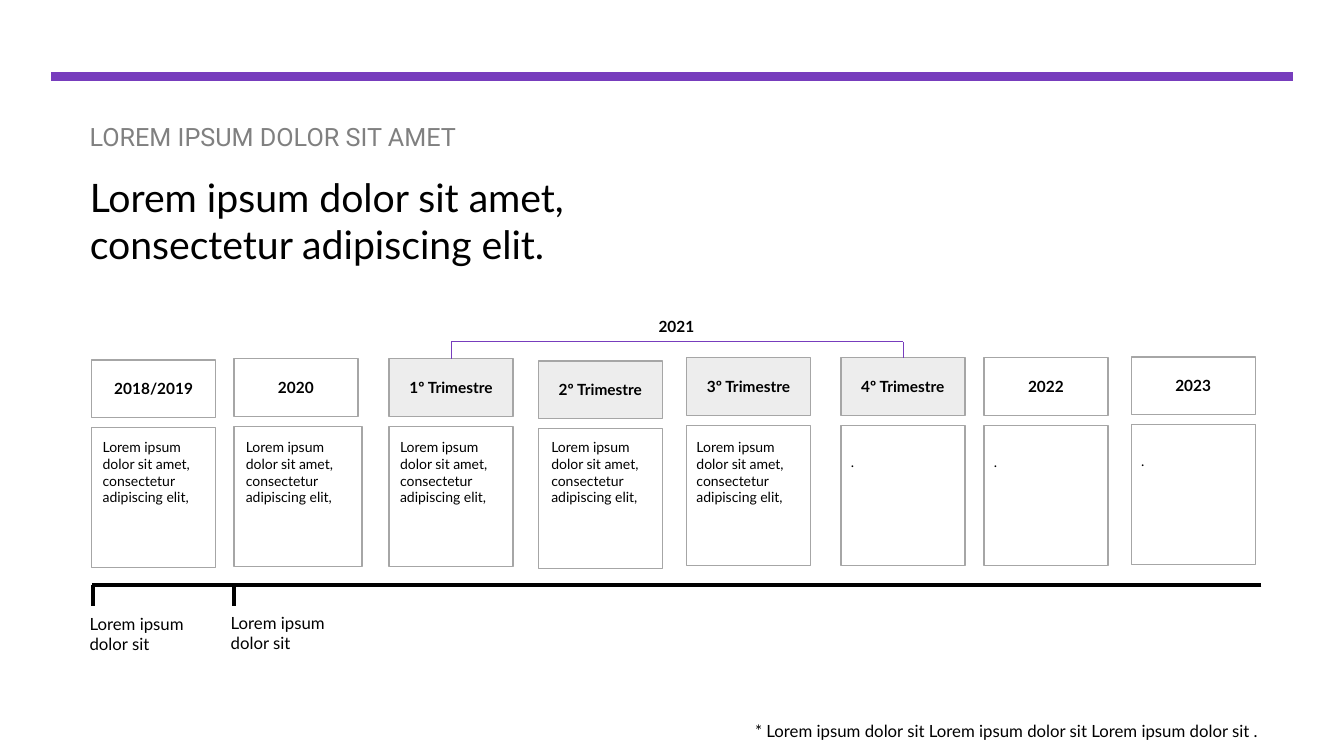
from pptx import Presentation
from pptx.dml.color import RGBColor
from pptx.enum.shapes import MSO_CONNECTOR, MSO_SHAPE
from pptx.enum.text import MSO_ANCHOR, MSO_AUTO_SIZE, PP_ALIGN
from pptx.oxml.ns import qn
from pptx.util import Inches, Pt

RECTANGLE = MSO_SHAPE.RECTANGLE
ROUNDED = MSO_SHAPE.ROUNDED_RECTANGLE
STRAIGHT = MSO_CONNECTOR.STRAIGHT
TOP, MIDDLE = MSO_ANCHOR.TOP, MSO_ANCHOR.MIDDLE
LEFT, CENTER, RIGHT = PP_ALIGN.LEFT, PP_ALIGN.CENTER, PP_ALIGN.RIGHT
NO_FIT = MSO_AUTO_SIZE.NONE

BLACK = RGBColor(0x00, 0x00, 0x00)
GREY = RGBColor(0x80, 0x80, 0x80)
BORDER = RGBColor(0xA6, 0xA6, 0xA6)
PALE = RGBColor(0xED, 0xED, 0xED)
PURPLE = RGBColor(0x77, 0x3D, 0xBD)

FILLER = "Lorem ipsum dolor sit amet, consectetur adipiscing elit,"
CARD_WIDTH, CARD_HEIGHT, HEADER_HEIGHT = 1.23, 1.39, 0.57
HEADER_RISE = 0.67
AXIS_Y, BRACKET_Y = 5.8, 3.39

# label, left, card top, card width, header fill, note, note left, note top
PERIODS = [
    ("2018/2019", 0.91, 4.24, CARD_WIDTH, None, FILLER, 0.92, 4.3),
    ("2020", 2.32, 4.23, 1.27, None, FILLER, 2.34, 4.3),
    ("1º Trimestre", 3.86, 4.23, CARD_WIDTH, PALE, FILLER, 3.87, 4.3),
    ("2º Trimestre", 5.34, 4.25, CARD_WIDTH, PALE, FILLER, 5.37, 4.3),
    ("3º Trimestre", 6.81, 4.22, CARD_WIDTH, PALE, FILLER, 6.81, 4.3),
    ("4º Trimestre", 8.34, 4.22, CARD_WIDTH, PALE, ".", 8.34, 4.45),
    ("2022", 9.76, 4.22, CARD_WIDTH, None, ".", 9.76, 4.45),
    ("2023", 11.22, 4.21, CARD_WIDTH, None, ".", 11.22, 4.44),
]
MILESTONES = [(0.92, 0.79, 6.04), (2.32, 2.19, 6.03)]


class TimelinePage:
    """Draws styled timeline elements on one page."""

    def __init__(self, page, font="Lato"):
        self.page = page
        self.font = font

    def set_text(self, shape, text, size, color=BLACK, bold=False, align=LEFT,
                 anchor=TOP, font=None):
        frame = shape.text_frame
        frame.word_wrap = True
        frame.auto_size = NO_FIT
        frame.vertical_anchor = anchor
        frame.text = text
        para = frame.paragraphs[0]
        para.alignment = align
        for span in para.runs:
            span.font.name = font or self.font
            span.font.size = Pt(size)
            span.font.bold = bold
            span.font.color.rgb = color

    def title(self, text, left, top, width, height, size):
        title = self.page.shapes.title
        title.left, title.top = Inches(left), Inches(top)
        title.width, title.height = Inches(width), Inches(height)
        self.set_text(title, text, size)

    def text(self, text, left, top, width, height, size, **style):
        box = self.page.shapes.add_textbox(
            Inches(left), Inches(top), Inches(width), Inches(height))
        self.set_text(box, text, size, **style)

    def box(self, kind, left, top, width, height, fill=None):
        shape = self.page.shapes.add_shape(
            kind, Inches(left), Inches(top), Inches(width), Inches(height))
        shape.shadow.inherit = False
        if fill is None:
            shape.fill.background()
        else:
            shape.fill.solid()
            shape.fill.fore_color.rgb = fill
        shape.line.color.rgb = BORDER
        shape.line.width = Pt(1)
        return shape

    def header(self, label, left, top, fill):
        shape = self.box(ROUNDED, left, top, CARD_WIDTH, HEADER_HEIGHT, fill)
        shape.adjustments[0] = 0
        self.set_text(shape, label, 11, bold=True, align=CENTER, anchor=MIDDLE)
        return shape

    def line(self, x1, y1, x2, y2, color, width):
        line = self.page.shapes.add_connector(
            STRAIGHT, Inches(x1), Inches(y1), Inches(x2), Inches(y2))
        line.line.color.rgb = color
        line.line.width = Pt(width)
        properties = line._element.spPr
        properties.append(properties.makeelement(qn("a:effectLst"), {}))
        return line

    def bracket(self, first, last):
        ends = []
        for header in (first, last):
            center = (header.left + header.width / 2) / Inches(1)
            stem = self.line(center, header.top / Inches(1), center, BRACKET_Y,
                             PURPLE, 0.5)
            stem.begin_connect(header, 0)
            ends.append(center)
        self.line(ends[0], BRACKET_Y, ends[1], BRACKET_Y, PURPLE, 0.5)


def main():
    deck = Presentation()
    deck.slide_width, deck.slide_height = Inches(13.33), Inches(7.5)
    timeline = TimelinePage(deck.slides.add_slide(deck.slide_layouts[5]))

    timeline.line(12.82, 0.76, 0.51, 0.76, PURPLE, 6)
    timeline.text("LOREM IPSUM DOLOR SIT AMET", 0.79, 1.15, 5.87, 0.4, 18,
                  color=GREY, font="Roboto")
    timeline.title("Lorem ipsum dolor sit amet, consectetur adipiscing elit.",
                   0.79, 1.67, 6.15, 1.04, 28)

    timeline.line(12.51, AXIS_Y, 0.91, AXIS_Y, BLACK, 3)
    headers = {}
    for label, left, top, width, fill, note, note_left, note_top in PERIODS:
        timeline.box(RECTANGLE, left, top, width, CARD_HEIGHT)
        headers[label] = timeline.header(label, left, top - HEADER_RISE, fill)
        note_height = 0.77 if note == FILLER else 0.27
        timeline.text(note, note_left, note_top, CARD_WIDTH, note_height, 10)

    timeline.bracket(headers["1º Trimestre"], headers["4º Trimestre"])
    timeline.text("2021", 6.31, 3.1, 0.8, 0.29, 11, bold=True, align=CENTER)

    for tick, left, top in MILESTONES:
        timeline.line(tick, AXIS_Y, tick, 6.01, BLACK, 3)
        timeline.text("Lorem ipsum dolor sit", left, top, CARD_WIDTH, 0.5, 12)

    timeline.text(
        "* Lorem ipsum dolor sit Lorem ipsum dolor sit Lorem ipsum dolor sit .",
        6.94, 7.1, 5.64, 0.3, 12, align=RIGHT)
    deck.save("out.pptx")


if __name__ == "__main__":
    main()
